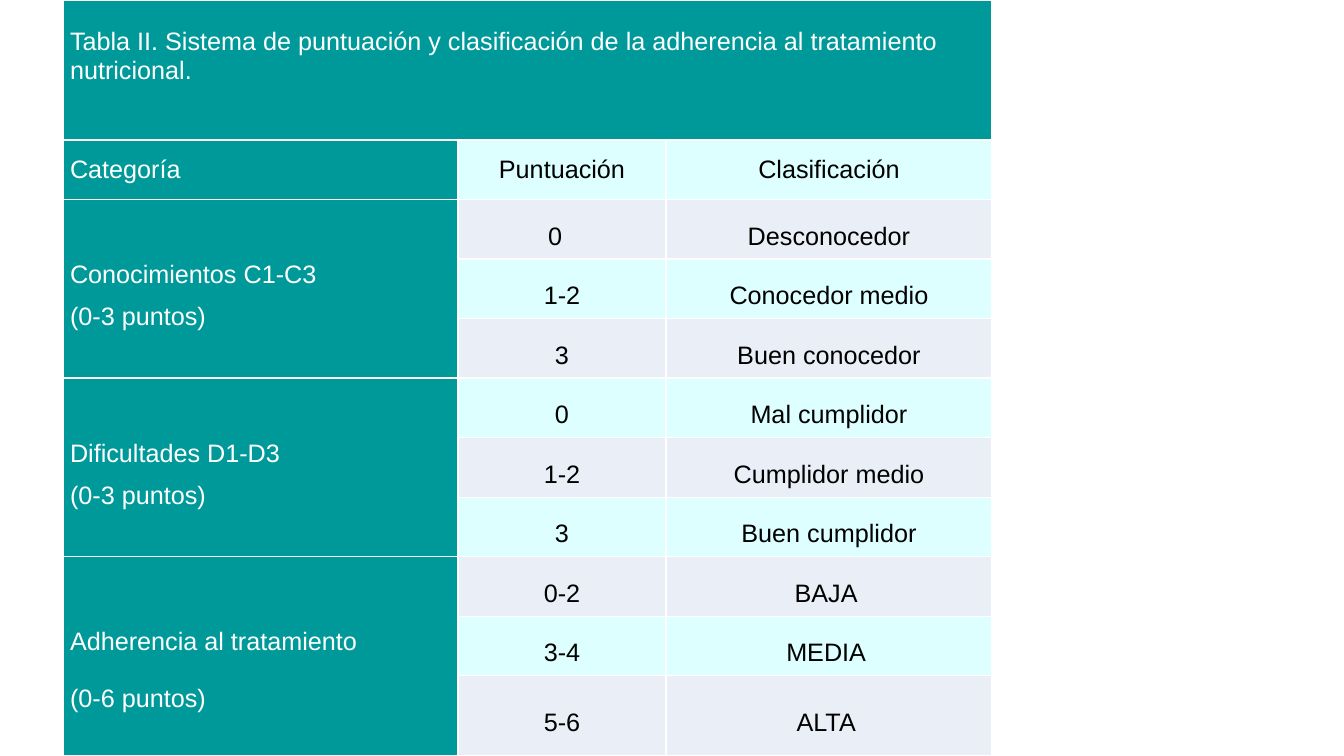
"""Build the slide with the scoring table for adherence to treatment."""
from lxml.etree import SubElement
from pptx import Presentation
from pptx.dml.color import RGBColor
from pptx.enum.text import MSO_ANCHOR, PP_ALIGN
from pptx.oxml.ns import qn
from pptx.util import Pt

TITLE = "Tabla II. Sistema de puntuación y clasificación de la adherencia al tratamiento nutricional."
HEAD = ("Categoría", "Puntuación", "Clasificación")
GROUPS = [
    (("Conocimientos C1-C3", "(0-3 puntos)"), 1.5,
     [("0", "Desconocedor"), ("1-2", "Conocedor medio"), ("3", "Buen conocedor")]),
    (("Dificultades D1-D3", "(0-3 puntos)"), 1.5,
     [("0", "Mal cumplidor"), ("1-2", "Cumplidor medio"), ("3", "Buen cumplidor")]),
    (("Adherencia al tratamiento", "(0-6 puntos)"), 2.0,
     [("0-2", "BAJA "), ("3-4", "MEDIA "), ("5-6", "ALTA ")]),
]
COLORS = {"teal": "009999", "mint": "DDFFFF", "pale": "EAEFF7",
          "white": "FFFFFF", "black": "000000"}
WIDTHS = (395, 208, 326)
TOP, MIDDLE, LAST = 140, 536, 80
LEFT, PAD, DROP = 63, 7, 28
WIDE, HIGH = 1344, 756


def px(n):
    return round(n * 914400 / 100.8)


def color(name):
    return RGBColor.from_string(COLORS[name])


def border(cell):
    props = cell._tc.get_or_add_tcPr()
    for side in ("a:lnL", "a:lnR", "a:lnT", "a:lnB"):
        line = SubElement(props, qn(side), w=str(Pt(1)))
        fill = SubElement(line, qn("a:solidFill"))
        SubElement(fill, qn("a:srgbClr"), val=COLORS["white"])


def paint(cell, back):
    border(cell)
    cell.fill.solid()
    cell.fill.fore_color.rgb = color(back)
    cell.margin_left = cell.margin_right = px(PAD)
    cell.margin_top = cell.margin_bottom = 0
    cell.vertical_anchor = MSO_ANCHOR.MIDDLE


def write(cell, lines, ink, align, space=1.0):
    cell.text = "\n".join(lines)
    for para in cell.text_frame.paragraphs:
        para.alignment = align
        para.line_spacing = space
        para.font.size = Pt(18)
        para.font.name = "Arial"
        para.font.color.rgb = color(ink)


def label(cell, lines, space=1.0):
    write(cell, lines, "white", PP_ALIGN.LEFT, space)


def value(cell, text, space=1.0):
    write(cell, [text], "black", PP_ALIGN.CENTER, space)


def build():
    deck = Presentation()
    deck.slide_width, deck.slide_height = px(WIDE), px(HIGH)
    slide = deck.slides.add_slide(deck.slide_layouts[6])
    count = 2 + sum(len(scores) for _, _, scores in GROUPS)
    table = slide.shapes.add_table(
        count, len(WIDTHS), px(LEFT), 0, px(sum(WIDTHS)), px(HIGH)).table
    table.first_row = table.horz_banding = False
    for col, width in zip(table.columns, WIDTHS):
        col.width = px(width)
    band = px(MIDDLE) // (count - 2)
    heights = [px(TOP)] + [band] * (count - 2) + [px(LAST)]
    for row, height in zip(table.rows, heights):
        row.height = height

    for r in range(count):
        for c in range(len(WIDTHS)):
            stripe = "mint" if r % 2 else "pale"
            paint(table.cell(r, c), "teal" if r == 0 or c == 0 else stripe)

    title = table.cell(0, 0)
    title.merge(table.cell(0, 2))
    title.vertical_anchor = MSO_ANCHOR.TOP
    title.margin_top = px(DROP)
    label(title, [TITLE])
    label(table.cell(1, 0), HEAD[:1])
    for c in (1, 2):
        value(table.cell(1, c), HEAD[c])

    start = 2
    for lines, space, scores in GROUPS:
        group = table.cell(start, 0)
        group.merge(table.cell(start + len(scores) - 1, 0))
        label(group, lines, space)
        for r, pair in enumerate(scores, start):
            for c, text in enumerate(pair, 1):
                value(table.cell(r, c), text, 1.5)
        start += len(scores)
    table.cell(2, 1).margin_right = px(3 * PAD)
    deck.save("out.pptx")


if __name__ == "__main__":
    build()
